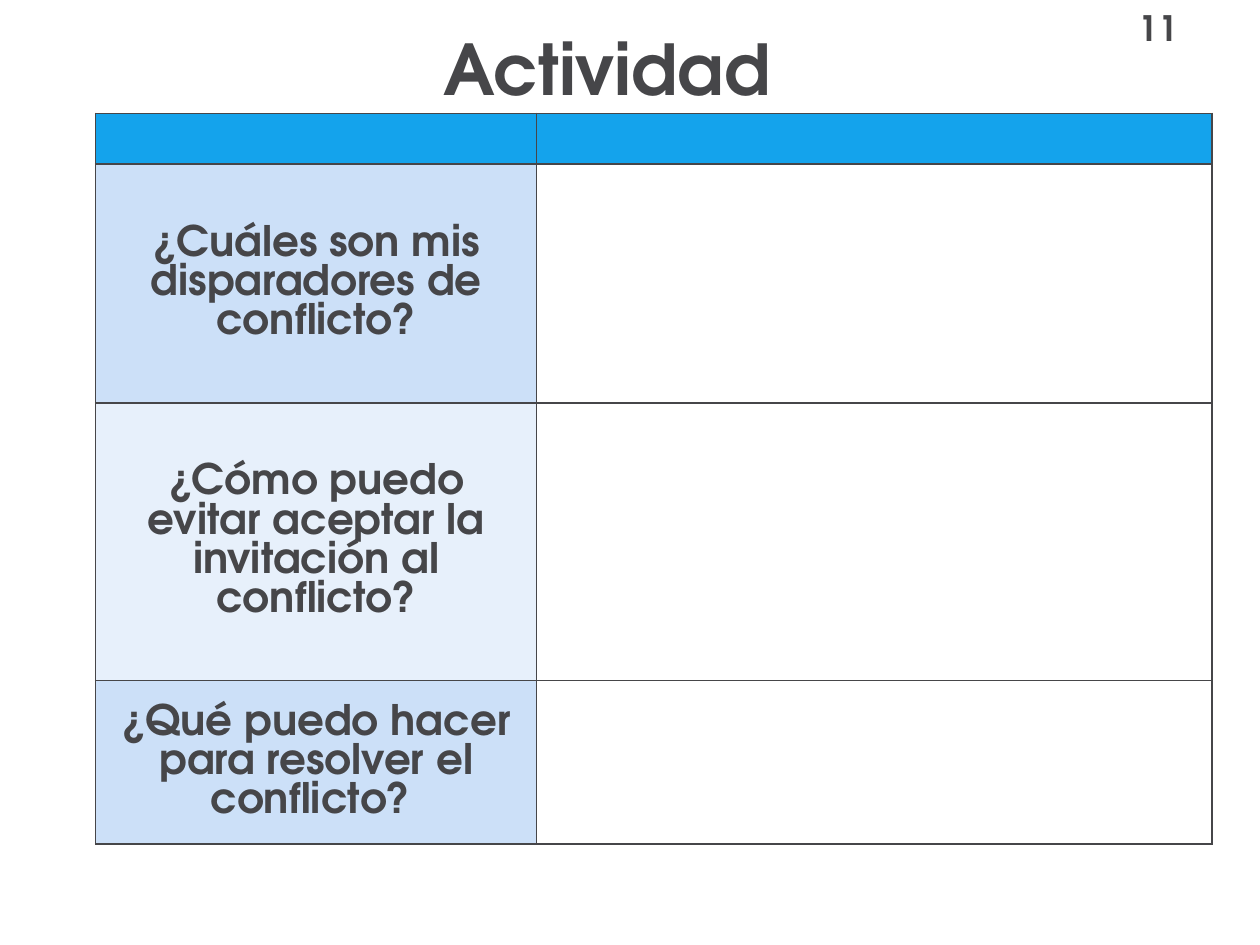
from dataclasses import dataclass

from lxml import etree
from pptx import Presentation
from pptx.dml.color import RGBColor
from pptx.enum.text import MSO_ANCHOR, PP_ALIGN
from pptx.oxml.ns import qn
from pptx.util import Inches, Pt

MIDDLE = MSO_ANCHOR.MIDDLE
CENTER = PP_ALIGN.CENTER
LEFT = PP_ALIGN.LEFT


@dataclass(frozen=True)
class Theme:
    font: str = "TeX Gyre Adventor"
    ink: str = "464649"
    head: str = "14A3EC"
    bands: tuple = ("CCE0F8", "E7F0FB")
    blank: str = "FFFFFF"
    title: int = 40
    body: int = 24
    number: int = 20
    pitch: float = 22.3
    rule: int = 1


class Deck:
    def __init__(self, theme):
        self.theme = theme
        self.file = Presentation()
        self.file.slide_width = Inches(10)
        self.file.slide_height = Inches(7.5)
        self.slide = self.file.slides.add_slide(self.file.slide_layouts[6])

    def add_text(self, para, text, size, align=LEFT):
        para.alignment = align
        run = para.add_run()
        run.text = text
        font = run.font
        font.name = self.theme.font
        font.size = Pt(size)
        font.bold = True
        font.color.rgb = RGBColor.from_string(self.theme.ink)

    def label(self, text, box, size, wrap=True):
        frame = self.slide.shapes.add_textbox(*map(Inches, box)).text_frame
        frame.word_wrap = wrap
        self.add_text(frame.paragraphs[0], text, size)

    def border(self, cell):
        props = cell._tc.get_or_add_tcPr()
        for side in ("lnL", "lnR", "lnT", "lnB"):
            line = etree.SubElement(props, qn(f"a:{side}"), w=str(Pt(self.theme.rule)))
            fill = etree.SubElement(line, qn("a:solidFill"))
            etree.SubElement(fill, qn("a:srgbClr"), val=self.theme.ink)

    def cell(self, cell, fill, text=""):
        self.border(cell)
        cell.fill.solid()
        cell.fill.fore_color.rgb = RGBColor.from_string(fill)
        cell.vertical_anchor = MIDDLE
        if text:
            para = cell.text_frame.paragraphs[0]
            para.line_spacing = Pt(self.theme.pitch)
            self.add_text(para, text, self.theme.body, CENTER)
        else:
            cell.margin_top = cell.margin_bottom = Inches(0.02)

    def table(self, asks, spot, widths, heights):
        size = (sum(widths), sum(heights))
        grid = self.slide.shapes.add_table(
            len(heights), len(widths), *map(Inches, spot + size)
        ).table
        for col, width in zip(grid.columns, widths):
            col.width = Inches(width)
        for row, height in zip(grid.rows, heights):
            row.height = Inches(height)
        for col in range(len(widths)):
            self.cell(grid.cell(0, col), self.theme.head)
        bands = self.theme.bands
        for row, ask in enumerate(asks, 1):
            self.cell(grid.cell(row, 0), bands[(row - 1) % len(bands)], ask)
            self.cell(grid.cell(row, 1), self.theme.blank)


def main():
    theme = Theme()
    deck = Deck(theme)
    asks = (
        "¿Cuáles son mis disparadores de conflicto?",
        "¿Cómo puedo evitar aceptar la invitación al conflicto?",
        "¿Qué puedo hacer para resolver el conflicto? ",
    )
    deck.label("11", (8.94, 0, 0.94, 0.44), theme.number)
    deck.table(asks, (0.76, 0.9), (3.5, 5.36), (0.4, 1.9, 2.2, 1.3))
    deck.label("Actividad", (3.42, 0.15, 2.84, 0.77), theme.title, wrap=False)
    deck.file.save("out.pptx")


if __name__ == "__main__":
    main()
